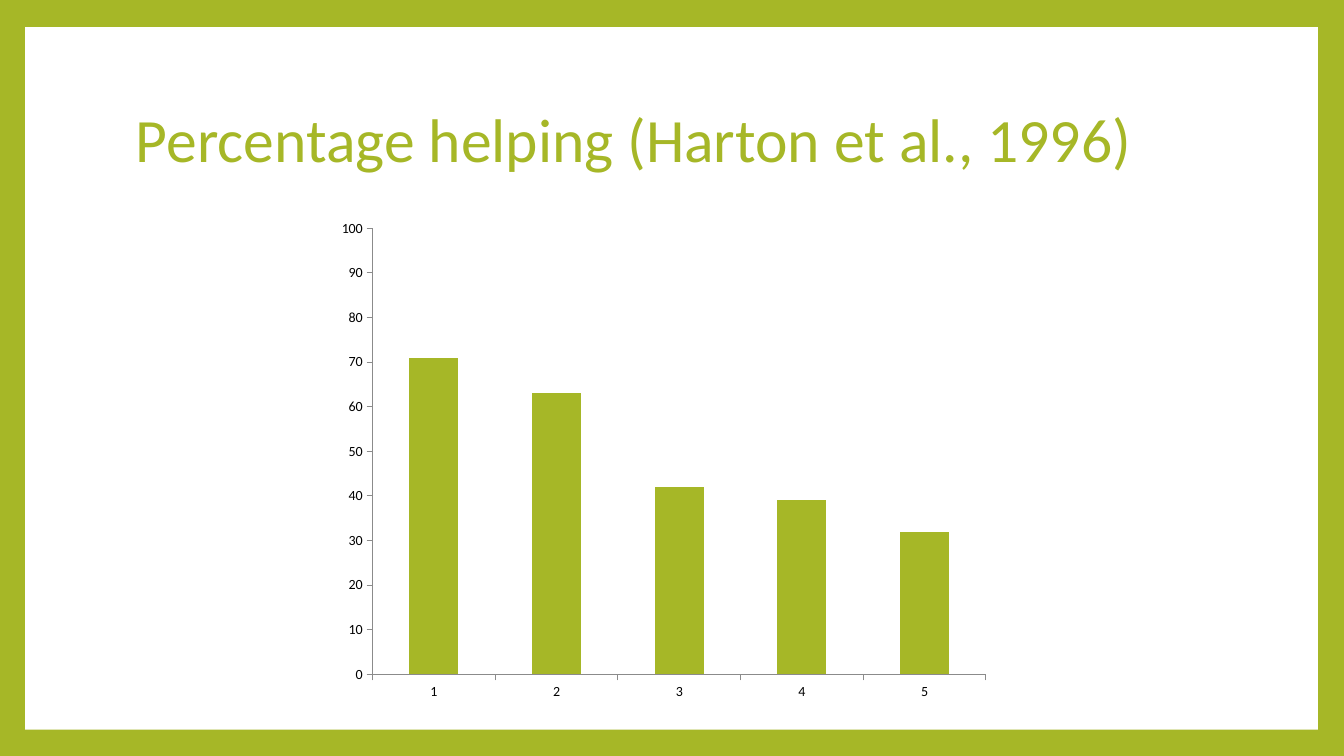
from pptx import Presentation
from pptx.chart.data import CategoryChartData
from pptx.dml.color import RGBColor
from pptx.enum.chart import XL_CHART_TYPE as CT, XL_TICK_LABEL_POSITION as LabelPos, XL_TICK_MARK as Tick
from pptx.enum.shapes import MSO_SHAPE as Shape
from pptx.enum.text import MSO_ANCHOR as Anchor
from pptx.oxml import parse_xml
from pptx.oxml.ns import nsdecls
from pptx.util import Inches, Pt

COLORS = {"green": "A6B727", "white": "FFFFFF", "black": "000000", "axis": "8B8B8B"}
FONT = "Calibri"


def rgb(name):
    return RGBColor.from_string(COLORS[name])


class SlideBuilder:
    def __init__(self, prs):
        self.s = prs.slides.add_slide(prs.slide_layouts[6])

    def background(self, color):
        fill = self.s.background.fill
        fill.solid()
        fill.fore_color.rgb = rgb(color)

    def panel(self, box, color):
        sp = self.s.shapes.add_shape(Shape.RECTANGLE, *map(Inches, box))
        sp.shadow.inherit = False
        sp.fill.solid()
        sp.fill.fore_color.rgb = rgb(color)
        sp.line.fill.background()

    def title(self, box, text, size, color):
        tf = self.s.shapes.add_textbox(*map(Inches, box)).text_frame
        tf.word_wrap = True
        tf.vertical_anchor = Anchor.MIDDLE
        p = tf.paragraphs[0]
        p.line_spacing = 0.9
        r = p.add_run()
        r.text = text
        r.font.name, r.font.size = FONT, Pt(size)
        r.font.color.rgb = rgb(color)

    def column_chart(self, box, cats, name, values, plot_box):
        data = CategoryChartData()
        data.categories = cats
        data.add_series(name, values)
        chart = self.s.shapes.add_chart(CT.COLUMN_CLUSTERED, *map(Inches, box), data).chart
        chart.has_legend = chart.has_title = False
        chart.font.name, chart.font.size = FONT, Pt(10)
        chart.font.color.rgb = rgb("black")

        # Columns
        plot = chart.plots[0]
        plot.gap_width = 150
        plot.vary_by_categories = False
        fill = plot.series[0].format.fill
        fill.solid()
        fill.fore_color.rgb = rgb("green")

        # Axes
        for axis in (chart.category_axis, chart.value_axis):
            axis.has_major_gridlines = False
            axis.major_tick_mark, axis.minor_tick_mark = Tick.OUTSIDE, Tick.NONE
            axis.tick_label_position = LabelPos.NEXT_TO_AXIS
            axis.format.line.width = Pt(0.75)
            axis.format.line.color.rgb = rgb("axis")
        scale = chart.value_axis
        scale.minimum_scale, scale.maximum_scale, scale.major_unit = 0, 100, 10

        # Inner plot area, as fractions of the chart
        area = chart._chartSpace.chart.plotArea
        for old in area.xpath("c:layout"):
            area.remove(old)
        spots = "".join(f'<c:{k} val="{v}"/>' for k, v in zip("xywh", plot_box))
        area.insert(0, parse_xml(
            f'<c:layout {nsdecls("c")}><c:manualLayout><c:layoutTarget val="inner"/>'
            f'<c:xMode val="edge"/><c:yMode val="edge"/>{spots}</c:manualLayout></c:layout>'))


def main():
    prs = Presentation()
    prs.slide_width, prs.slide_height = Inches(13.33), Inches(7.5)
    b = SlideBuilder(prs)

    # Green frame around a white panel
    b.background("green")
    b.panel((0.25, 0.27, 12.82, 6.97), "white")

    # Title and chart
    b.title((1.25, 0.67, 10.8, 1.48), "Percentage helping (Harton et al., 1996)", 44, "green")
    b.column_chart((3.25, 2.16, 6.83, 5.03), ["1", "2", "3", "4", "5"],
                   "Series 1", (71, 63, 42, 39, 32), (0.065, 0.021, 0.891, 0.88))
    prs.save("out.pptx")


if __name__ == "__main__":
    main()
